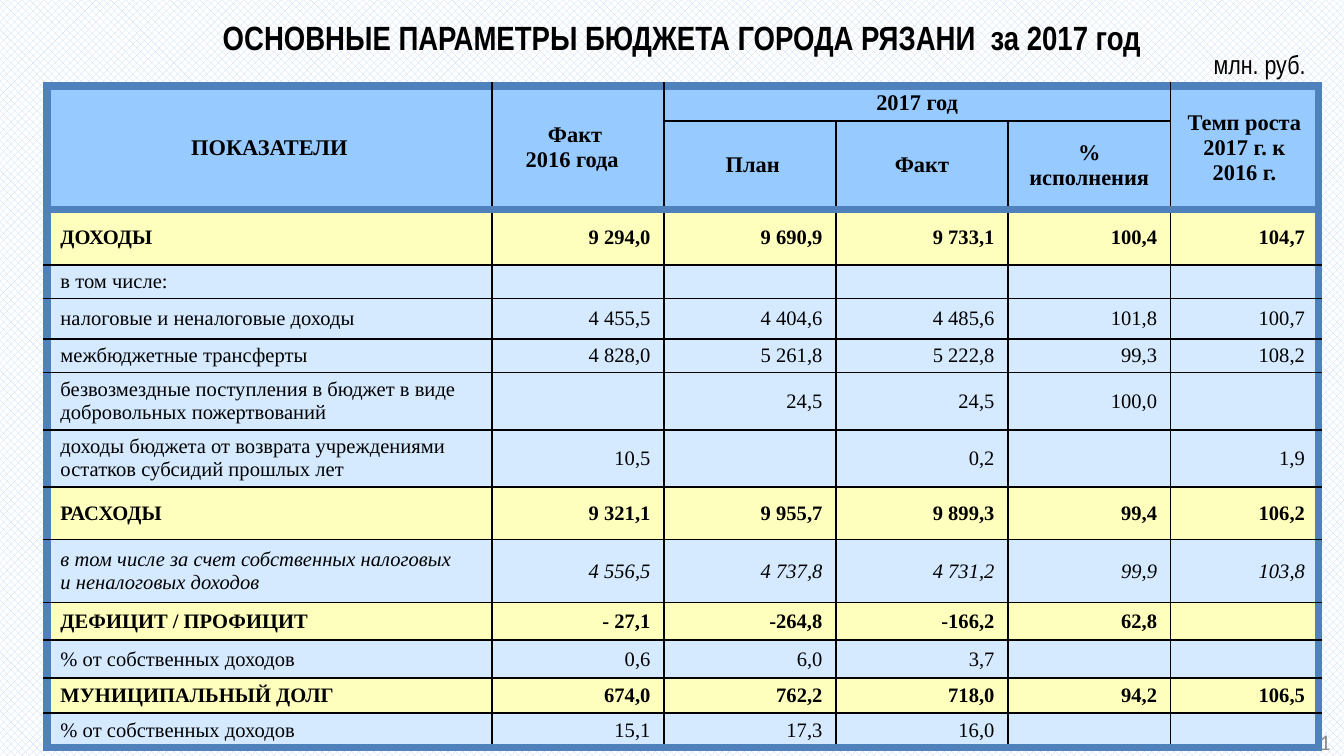
"""Builds a one-slide table of the main parameters of the Ryazan city budget for 2017."""
from lxml import etree
from pptx import Presentation
from pptx import util as u
from pptx.dml.color import RGBColor
from pptx.enum import dml, text
from pptx.oxml.ns import qn

COLORS = {
    "ink": "000000", "frame": "4F81BD", "header": "97CBFF", "total": "FFFFBD",
    "detail": "D5EAFF", "check": "C6D9F1", "paper": "FFFFFF", "number": "8C8C8C",
}
SERIF, NARROW = "Times New Roman", "Arial Narrow"
LEFT, CENTER, RIGHT = text.PP_ALIGN.LEFT, text.PP_ALIGN.CENTER, text.PP_ALIGN.RIGHT
TOP, MIDDLE = text.MSO_ANCHOR.TOP, text.MSO_ANCHOR.MIDDLE

HEADER = [
    ("ПОКАЗАТЕЛИ", "Факт \n2016 года  ", "2017 год", "", "", "Темп роста 2017 г. к 2016 г."),
    ("", "", " План", "Факт", "% исполнения", ""),
]
MERGES = [((0, 0), (1, 0)), ((0, 1), (1, 1)), ((0, 2), (0, 4)), ((0, 5), (1, 5))]
BODY = [
    ("total", "ДОХОДЫ", "9 294,0", "9 690,9", "9 733,1", "100,4", "104,7"),
    ("detail", "в том числе:", "", "", "", "", ""),
    ("detail", "налоговые и неналоговые доходы", "4 455,5", "4 404,6", "4 485,6", "101,8", "100,7"),
    ("detail", "межбюджетные трансферты", "4 828,0", "5 261,8", "5 222,8", "99,3", "108,2"),
    ("detail", "безвозмездные поступления в бюджет в виде добровольных пожертвований",
     "", "24,5", "24,5", "100,0", ""),
    ("detail", "доходы бюджета от возврата учреждениями остатков субсидий прошлых лет",
     "10,5", "", "0,2", "", "1,9"),
    ("total", "РАСХОДЫ", "9 321,1", "9 955,7", "9 899,3", "99,4", "106,2"),
    ("italic", "в том числе за счет собственных налоговых\nи неналоговых доходов",
     "4 556,5", "4 737,8", "4 731,2", "99,9", "103,8"),
    ("total", "ДЕФИЦИТ / ПРОФИЦИТ", "- 27,1", "-264,8", "-166,2", "62,8", ""),
    ("detail", "% от собственных доходов", "0,6", "6,0", "3,7", "", ""),
    ("total", "МУНИЦИПАЛЬНЫЙ ДОЛГ", "674,0", "762,2", "718,0", "94,2", "106,5"),
    ("detail", "% от собственных доходов", "15,1", "17,3", "16,0", "", ""),
]
ROWS = [("header", *row) for row in HEADER] + BODY
COLUMN_WIDTHS = [3.31, 1.28, 1.28, 1.28, 1.21, 1.1]
ROW_HEIGHTS = [0.26, 0.63, 0.41, 0.25, 0.3, 0.25, 0.42, 0.41, 0.39, 0.47, 0.28, 0.28, 0.26, 0.26]


def rgb(name):
    return RGBColor.from_string(COLORS[name])


def style_text(frame, align, size, font, color="ink", bold=False, italic=False):
    for para in frame.paragraphs:
        para.alignment = align
        for span in para.runs:
            span.font.size, span.font.name = u.Pt(size), font
            span.font.bold, span.font.italic = bold, italic
            span.font.color.rgb = rgb(color)
        if not para.runs:
            para._p.get_or_add_endParaRPr().set("sz", str(size * 100))


def add_label(slide, place, words, inset, anchor, *style):
    frame = slide.shapes.add_textbox(*map(u.Inches, place)).text_frame
    frame.word_wrap = True
    frame.margin_left = u.Inches(inset)
    frame.vertical_anchor = anchor
    frame.text = words
    style_text(frame, *style)


def set_borders(cell, thick):
    properties = cell._tc.get_or_add_tcPr()
    for index, side in enumerate("LRTB"):
        width, color = (4.5, "frame") if side in thick else (1, "ink")
        line = etree.Element(qn("a:ln" + side), w=str(u.Pt(width)))
        fill = etree.SubElement(line, qn("a:solidFill"))
        etree.SubElement(fill, qn("a:srgbClr"), val=COLORS[color])
        properties.insert(index, line)


def fill_cell(cell, kind, words, row, column):
    header = kind == "header"
    cell.text = words
    cell.margin_top = cell.margin_bottom = u.Inches(0.03)
    cell.vertical_anchor = TOP if words == "2017 год" else MIDDLE
    cell.fill.solid()
    cell.fill.fore_color.rgb = rgb("detail" if kind == "italic" else kind)
    align = CENTER if header else RIGHT if column else LEFT
    style_text(cell.text_frame, align, 12 if header else 11, SERIF,
               bold=kind in ("header", "total"), italic=kind == "italic")
    bottom = row + (cell.span_height if cell.is_merge_origin else 1)
    edges = {
        "L": column == 0,
        "R": column == len(COLUMN_WIDTHS) - 1,
        "T": row in (0, len(HEADER)),
        "B": bottom in (len(HEADER), len(ROWS)),
    }
    set_borders(cell, [side for side, thick in edges.items() if thick])


def add_budget_table(slide):
    place = (0.35, 0.64, sum(COLUMN_WIDTHS), sum(ROW_HEIGHTS))
    table = slide.shapes.add_table(len(ROWS), len(COLUMN_WIDTHS), *map(u.Inches, place)).table
    table.first_row = table.horz_banding = False
    for column, width in zip(table.columns, COLUMN_WIDTHS):
        column.width = u.Inches(width)
    for row, height in zip(table.rows, ROW_HEIGHTS):
        row.height = u.Inches(height)
    for first, last in MERGES:
        table.cell(*first).merge(table.cell(*last))
    for row, (kind, *values) in enumerate(ROWS):
        for column, words in enumerate(values):
            fill_cell(table.cell(row, column), kind, words, row, column)


def main():
    deck = Presentation()
    deck.slide_width = u.Inches(10)
    deck.slide_height = deck.slide_width * 9 // 16
    slide = deck.slides.add_slide(deck.slide_layouts[6])
    backdrop = slide.background.fill
    backdrop.patterned()
    backdrop.pattern = dml.MSO_PATTERN.LARGE_CHECKER_BOARD
    backdrop.fore_color.rgb, backdrop.back_color.rgb = rgb("check"), rgb("paper")

    add_label(slide, (0.51, 0.1, 9.13, 0.35),
              "ОСНОВНЫЕ ПАРАМЕТРЫ БЮДЖЕТА ГОРОДА РЯЗАНИ  за 2017 год",
              0.1, MIDDLE, CENTER, 18, NARROW, "ink", True)
    add_budget_table(slide)
    add_label(slide, (8.78, 0.31, 1.1, 0.34), "млн. руб.", 0.25, TOP, LEFT, 14, NARROW)
    add_label(slide, (9.53, 5.41, 0.47, 0.22), "1", 0.1, MIDDLE, RIGHT, 12, "Calibri", "number")
    deck.save("out.pptx")


if __name__ == "__main__":
    main()
